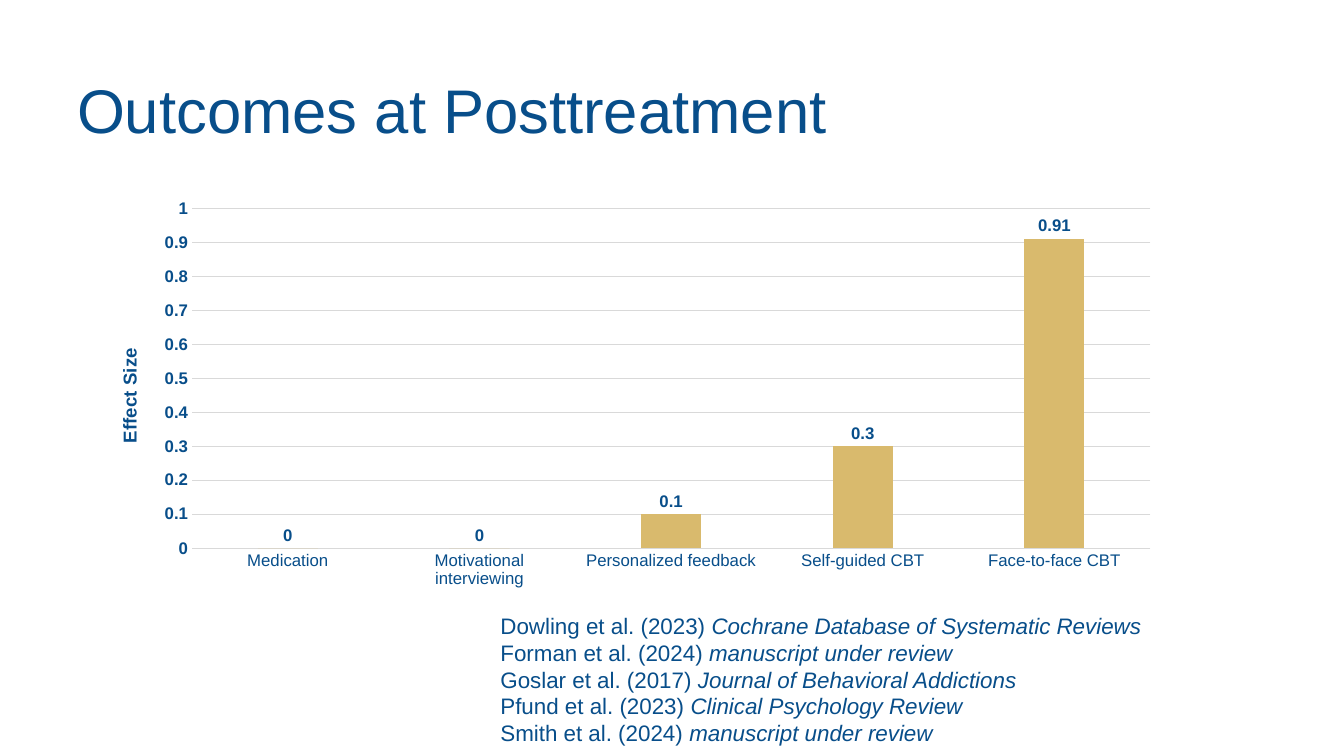
from lxml.etree import SubElement
from pptx import Presentation
from pptx.chart.data import CategoryChartData
from pptx.dml.color import RGBColor
from pptx.enum.chart import XL_CHART_TYPE as ChartType
from pptx.enum.chart import XL_LABEL_POSITION as LabelPosition
from pptx.enum.chart import XL_TICK_MARK as TickMark
from pptx.enum.text import MSO_ANCHOR as Anchor
from pptx.oxml.ns import qn
from pptx.util import Inches, Pt

THEME = {
    "font": "Arial",
    "blue": RGBColor.from_string("084E8A"),
    "gold": RGBColor.from_string("D9BA6D"),
    "grid": RGBColor.from_string("D9D9D9"),
    "title": 44,
    "source": 16,
    "axis_title": 13.3,
    "label": 12,
}

OUTCOMES = {
    "Medication": 0,
    "Motivational interviewing": 0,
    "Personalized feedback": 0.1,
    "Self-guided CBT": 0.3,
    "Face-to-face CBT": 0.91,
}

SOURCES = [
    ("Dowling et al. (2023) ", "Cochrane Database of Systematic Reviews"),
    ("Forman et al. (2024) ", "manuscript under review"),
    ("Goslar et al. (2017) ", "Journal of Behavioral Addictions"),
    ("Pfund et al. (2023) ", "Clinical Psychology Review"),
    ("Smith et al. (2024) ", "manuscript under review"),
]


def style(font, size, bold=False):
    font.name = THEME["font"]
    font.size = Pt(THEME[size])
    font.bold = bold
    font.color.rgb = THEME["blue"]


def place(parent, index, **settings):
    """Give a chart part a manual layout, in shares of the chart's size."""
    for old in parent.findall(qn("c:layout")):
        parent.remove(old)
    layout = SubElement(parent, qn("c:layout"))
    manual = SubElement(layout, qn("c:manualLayout"))
    for name, value in settings.items():
        SubElement(manual, qn(f"c:{name}")).set("val", str(value))
    parent.insert(index, layout)


deck = Presentation()
deck.slide_width, deck.slide_height = Inches(13.33), Inches(7.5)
page = deck.slides.add_slide(deck.slide_layouts[6])
width, height = deck.slide_width, deck.slide_height

# Title
title_box = page.shapes.add_textbox(
    int(0.05 * width), int(0.053 * height), int(0.85 * width), int(0.193 * height))
title_frame = title_box.text_frame
title_frame.word_wrap = True
title_frame.vertical_anchor = Anchor.MIDDLE
title = title_frame.paragraphs[0]
title.text = "Outcomes at Posttreatment"
title.line_spacing = 0.9
style(title.font, "title")

# Effect size chart
data = CategoryChartData()
data.categories = list(OUTCOMES)
data.add_series("Series 1", list(OUTCOMES.values()))
chart = page.shapes.add_chart(
    ChartType.COLUMN_CLUSTERED, int(0.069 * width), int(0.252 * height),
    int(0.803 * width), int(0.536 * height), data).chart
chart.has_legend = False
chart.has_title = False
style(chart.font, "label")

plot = chart.plots[0]
plot.gap_width = 219
plot.overlap = -27
plot.vary_by_categories = False
bars = plot.series[0].format.fill
bars.solid()
bars.fore_color.rgb = THEME["gold"]
plot.has_data_labels = True
labels = plot.data_labels
labels.show_value = True
labels.position = LabelPosition.OUTSIDE_END
style(labels.font, "label", bold=True)

treatments, effects = chart.category_axis, chart.value_axis
for axis in (treatments, effects):
    axis.major_tick_mark = axis.minor_tick_mark = TickMark.NONE
    style(axis.tick_labels.font, "label", bold=axis is effects)

effects.minimum_scale, effects.maximum_scale, effects.major_unit = 0, 1, 0.1
effects.format.line.fill.background()
effects.has_major_gridlines = True
for rule in (treatments.format.line, effects.major_gridlines.format.line):
    rule.color.rgb = THEME["grid"]
    rule.width = Pt(0.75)

axis_title = effects.axis_title
caption = axis_title.text_frame.paragraphs[0]
caption.text = "Effect Size"
style(caption.font, "axis_title", bold=True)
turn = axis_title.text_frame._txBody.find(qn("a:bodyPr"))
turn.set("rot", "-5400000")
turn.set("vert", "horz")
place(axis_title._element, 1, xMode="edge", yMode="edge", x=0.02, y=0.38)
place(chart.element.find(f".//{qn('c:plotArea')}"), 0, layoutTarget="inner",
      xMode="edge", yMode="edge", x=0.092, y=0.044, w=0.888, h=0.839)

# Sources
source_box = page.shapes.add_textbox(
    int(0.365 * width), int(0.803 * height), int(0.635 * width), int(0.19 * height))
source_frame = source_box.text_frame
source_frame.word_wrap = True
for number, (authors, journal) in enumerate(SOURCES):
    para = source_frame.add_paragraph() if number else source_frame.paragraphs[0]
    para.add_run().text = authors
    span = para.add_run()
    span.text = journal
    span.font.italic = True
    style(para.font, "source")

deck.save("out.pptx")
